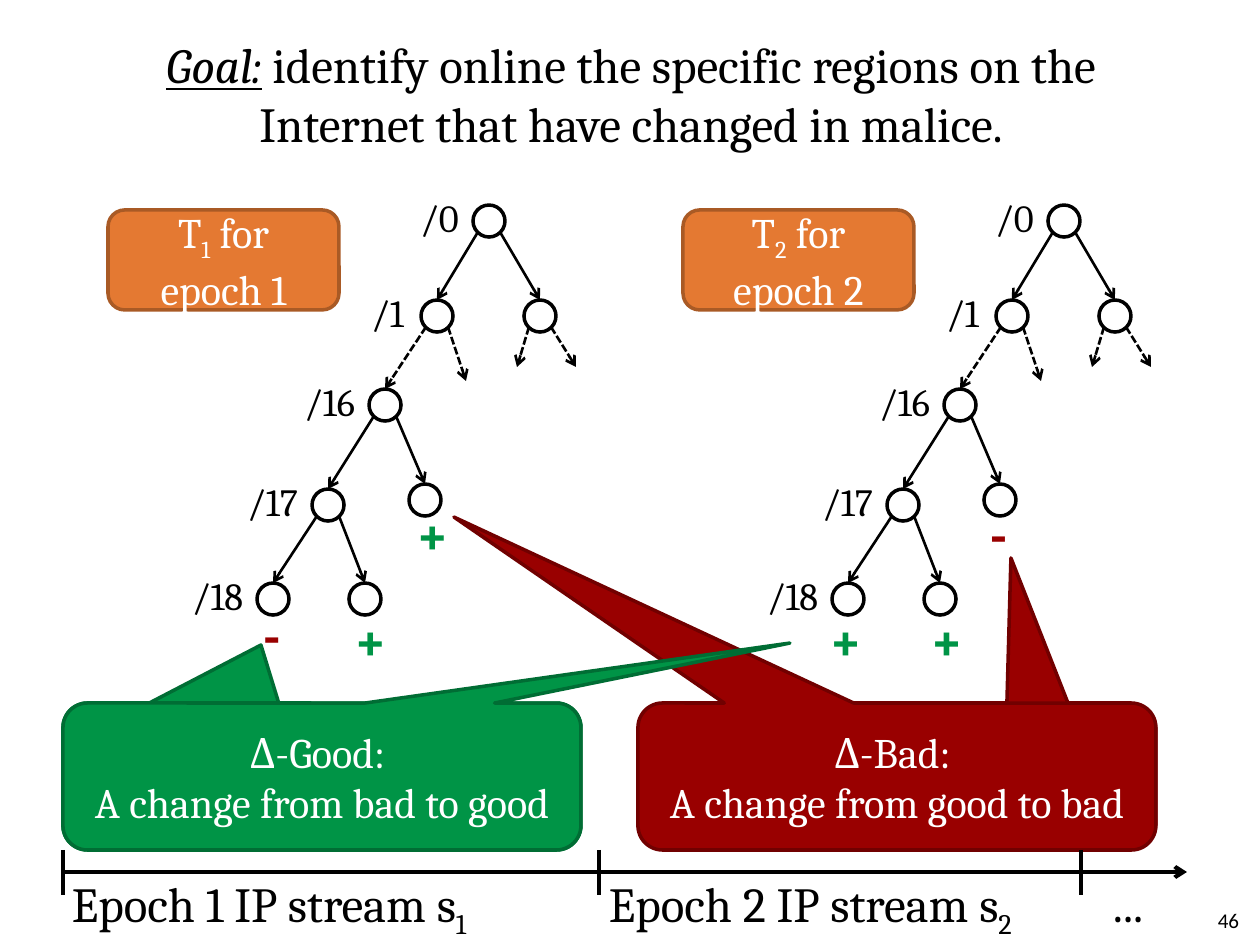
from lxml import etree
from pptx import Presentation
from pptx import util as u
from pptx.dml.color import RGBColor
from pptx.enum import dml, shapes, text
from pptx.oxml.ns import qn

SCALE = 914400 / 126
BLACK, WHITE = "000000", "FFFFFF"
GREEN, RED = "009446", "990000"
NODE = 32
ROUND = 0.167


def px(length):
    return u.Emu(round(length * SCALE))


def color(value):
    return RGBColor.from_string(value)


class Canvas:
    font = "Cambria"

    def __init__(self, slide):
        self.slide = slide
        self.shapes = slide.shapes

    def group(self):
        self.shapes = self.slide.shapes.add_group_shape().shapes

    def ungroup(self):
        self.shapes = self.slide.shapes

    def typeset(self, frame, parts, size, ink, align="CENTER", anchor="MIDDLE",
                bold=None, font=None, inset=(0, 0)):
        frame.margin_left = frame.margin_right = px(inset[0])
        frame.margin_top = frame.margin_bottom = px(inset[1])
        frame.vertical_anchor = text.MSO_ANCHOR[anchor]
        frame.word_wrap = True
        paragraph = frame.paragraphs[0]
        paragraph.alignment = text.PP_ALIGN[align]
        for part in parts:
            if part == "\n":
                paragraph.add_line_break()
                continue
            run = paragraph.add_run()
            run.text = part
            run.font.size = u.Pt(size)
            run.font.name = font or self.font
            run.font.color.rgb = color(ink)
            run.font.bold = bold
            if part in ("1", "2"):
                run.font._element.set("baseline", "-25000")
        return paragraph

    def paint(self, shape, fill, outline):
        shape.shadow.inherit = False
        if fill:
            shape.fill.solid()
            shape.fill.fore_color.rgb = color(fill)
            shape.line.color.rgb = color(outline)
            shape.line.width = u.Pt(2)
        else:
            shape.fill.background()
            shape.line.fill.background()

    def shape(self, kind, x, y, w, h, fill=None, outline=BLACK):
        shape = self.shapes.add_shape(
            shapes.MSO_SHAPE[kind], px(x), px(y), px(w), px(h))
        self.paint(shape, fill, outline)
        return shape

    def outline(self, points, fill, edge):
        builder = self.shapes.build_freeform(*points[0], scale=SCALE)
        builder.add_line_segments(points[1:])
        self.paint(builder.convert_to_shape(), fill, edge)

    def callout(self, x, y, w, h, tip, fill, edge, parts=()):
        box = self.shape("ROUNDED_RECTANGULAR_CALLOUT", x, y, w, h, fill, edge)
        box.adjustments[0] = (tip[0] - x - w / 2) / w
        box.adjustments[1] = (tip[1] - y - h / 2) / h
        box.adjustments[2] = ROUND
        if parts:
            self.typeset(box.text_frame, parts, 24, WHITE)

    def line(self, start, end, width=1.5, arrow=True, dashed=False):
        line = self.shapes.add_connector(
            shapes.MSO_CONNECTOR.STRAIGHT, *map(px, start + end))
        line.line.color.rgb = color(BLACK)
        line.line.width = u.Pt(width)
        if dashed:
            line.line.dash_style = dml.MSO_LINE.SQUARE_DOT
        properties = line._element.spPr
        if arrow:
            etree.SubElement(properties.find(qn("a:ln")), qn("a:tailEnd"), type="arrow")
        etree.SubElement(properties, qn("a:effectLst"))

    def textbox(self, x, y, w, h, parts, size, ink=BLACK, **style):
        box = self.shapes.add_textbox(px(x), px(y), px(w), px(h))
        return self.typeset(box.text_frame, parts, size, ink, **style)

    def tag(self, x, y, w, h, parts, size, ink=BLACK, **style):
        self.textbox(x, y, w, h, parts, size, ink, align="LEFT", anchor="TOP", **style)
        frame = self.shapes[-1].text_frame
        frame.word_wrap = False
        frame.auto_size = text.MSO_AUTO_SIZE.SHAPE_TO_FIT_TEXT


NODES = {
    "/0": (473, 205), "/1": (421, 300), "/16": (369, 389),
    "/17": (312, 489), "/18": (257, 583),
    "right of /1": (524, 300), "right of /17": (409, 484), "right of /18": (349, 583),
}
EDGES = [
    ("/0", "left", "/1"), ("/0", "right", "right of /1"),
    ("/1", "left", "/16"), ("/16", "left", "/17"),
    ("/16", "right", "right of /17"), ("/17", "left", "/18"),
    ("/17", "right", "right of /18"),
]
STUBS = [
    ("/1", "right", (466, 381)), ("right of /1", "left", (517, 367)),
    ("right of /1", "right", (576, 367)),
]


def draw_tree(canvas, shift, epoch, signs):
    canvas.group()

    def exit_point(node, side):
        x, y = NODES[node]
        return x + shift + (5 if side == "left" else NODE - 5), y + NODE - 5

    for parent, side, child in EDGES:
        x, y = NODES[child]
        canvas.line(exit_point(parent, side), (x + shift + NODE // 2, y),
                    dashed=parent == "/1")
    for parent, side, (x, y) in STUBS:
        canvas.line(exit_point(parent, side), (x + shift, y), dashed=True)
    for prefix, (x, y) in NODES.items():
        canvas.shape("OVAL", x + shift, y, NODE, NODE, WHITE)
        if prefix.startswith("/"):
            width = 57 if len(prefix) == 2 else 69
            label = canvas.shape(
                "ROUNDED_RECTANGLE", x + shift - width - 5, y - 14, width, 53)
            canvas.typeset(label.text_frame, [prefix], 22, BLACK)
    title = canvas.shape(
        "ROUNDED_RECTANGLE", 108 + shift, 210, 231, 100, "E47932", "A95A25")
    canvas.typeset(title.text_frame, ["T", epoch, " for", "\n", f"epoch {epoch}"], 24, WHITE)
    for sign, x, y in signs:
        good = sign == "+"
        canvas.tag(x + shift, y, 34 if good else 19, 68, [sign], 32,
                   GREEN if good else RED, bold=True)
    canvas.ungroup()


def draw_changes(canvas):
    top, width, height, cut = 703, 518, 147, 25
    bad, good = 638, 63
    right, bottom = bad + width, top + height
    canvas.group()
    canvas.outline([
        (bad, top + cut), (bad + cut, top), (1007, top), (1011, 558), (1068, top),
        (right - cut, top), (right, top + cut), (right, bottom - cut),
        (right - cut, bottom), (bad + cut, bottom), (bad, bottom - cut),
    ], RED, "710000")
    canvas.callout(bad, top, width, height, (454, 517), RED, "710000",
                   ["Δ-Bad: ", "\n", "A change from good to bad"])
    canvas.group()
    canvas.callout(good, top, width, height, (261, 645), GREEN, "006D34")
    canvas.callout(good, top, width, height, (790, 643), GREEN, "006D34",
                   ["Δ-Good: ", "\n", "A change from bad to good"])
    canvas.ungroup()


def draw_timeline(canvas):
    canvas.line((63, 872), (1187, 872), 2.25)
    for x in (63, 599, 1081):
        canvas.line((x, 850), (x, 895), 2.25, arrow=False)
    for epoch, x in (("1", 72), ("2", 609)):
        canvas.tag(x, 873, 444, 59, [f"Epoch {epoch} IP stream s", epoch], 28)
    canvas.tag(1113, 873, 40, 59, ["...."], 28)


def main():
    deck = Presentation()
    deck.slide_width, deck.slide_height = px(1260), px(945)
    canvas = Canvas(deck.slides.add_slide(deck.slide_layouts[6]))
    canvas.textbox(945, 895, 294, 50, ["46"], 12, align="RIGHT", font="Calibri")
    goal = canvas.textbox(
        124, 29, 1014, 179,
        ["Goal:", " identify online the specific regions on the Internet "
                  "that have changed in malice."],
        28, anchor="TOP", inset=(13, 6))
    goal.space_before = u.Pt(5.6)
    goal.runs[0].font.italic = goal.runs[0].font.underline = True
    draw_tree(canvas, 0, "1", [("+", 354, 604), ("-", 263, 599), ("+", 416, 498)])
    draw_tree(canvas, 575, "2", [("+", 355, 604), ("+", 254, 604), ("-", 415, 498)])
    draw_changes(canvas)
    draw_timeline(canvas)
    deck.save("out.pptx")


if __name__ == "__main__":
    main()
